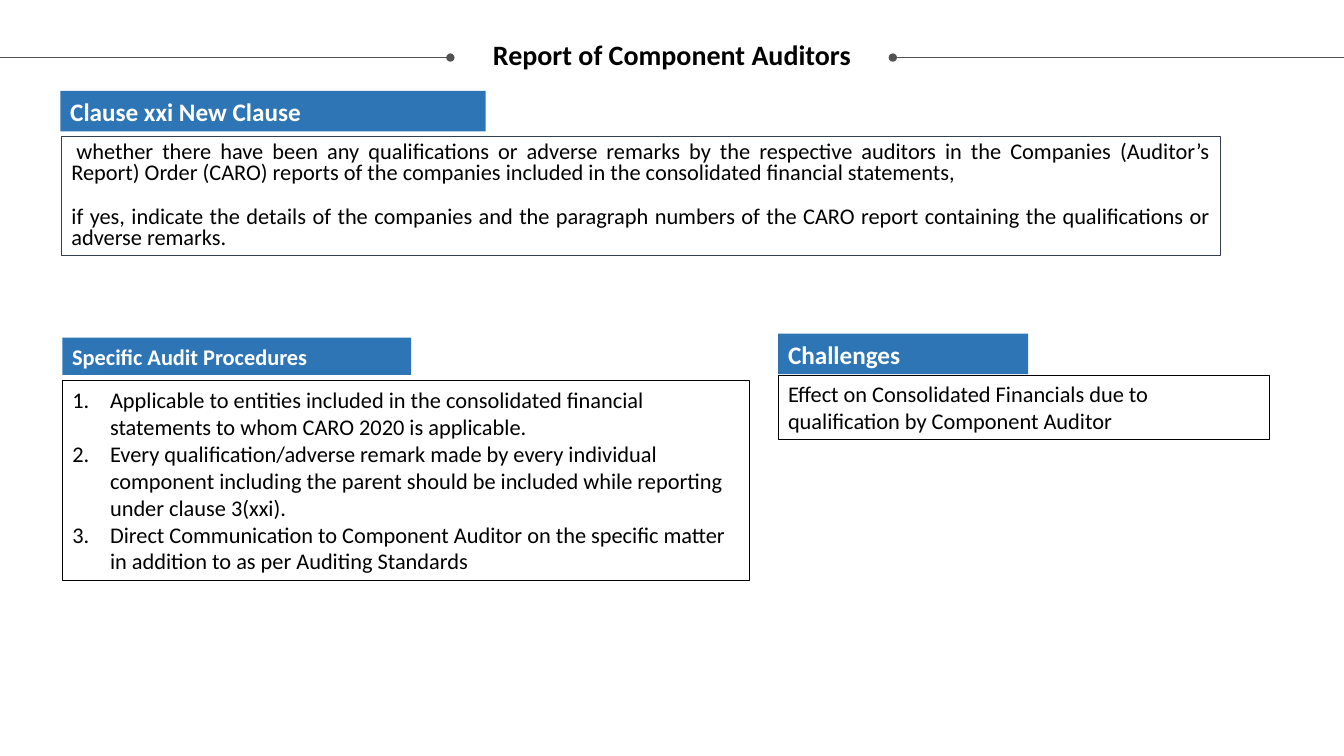
"""Build the slide on the report of component auditors under Clause xxi."""
from lxml import etree
from pptx import Presentation
from pptx.dml.color import RGBColor
from pptx.enum.shapes import MSO_CONNECTOR, MSO_SHAPE
from pptx.enum.text import MSO_ANCHOR, MSO_AUTO_SIZE, PP_ALIGN
from pptx.oxml.ns import qn
from pptx.util import Cm, Pt

RECTANGLE = MSO_SHAPE.RECTANGLE
STRAIGHT = MSO_CONNECTOR.STRAIGHT
MIDDLE = MSO_ANCHOR.MIDDLE
NO_AUTOFIT = MSO_AUTO_SIZE.NONE
LEFT, CENTER, JUSTIFY = PP_ALIGN.LEFT, PP_ALIGN.CENTER, PP_ALIGN.JUSTIFY
BLACK, WHITE, BLUE, GREY, NAVY = "000000", "FFFFFF", "2E75B6", "525252", "333F50"


def rgb(value):
    return RGBColor.from_string(value)


def fill_in(shape, box, paragraphs, size, color=BLACK, bold=False, align=LEFT, spacing=1.0):
    shape.left, shape.top, shape.width, shape.height = [Cm(length) for length in box]
    frame = shape.text_frame
    frame.text = "\n".join(paragraphs)
    frame.word_wrap = True
    frame.auto_size = NO_AUTOFIT
    frame.vertical_anchor = MIDDLE
    for paragraph in frame.paragraphs:
        paragraph.alignment = align
        paragraph.line_spacing = spacing
        paragraph.space_before = Pt(0)
        for run in paragraph.runs:
            run.font.name = "Calibri"
            run.font.size = Pt(size)
            run.font.bold = bold
            run.font.color.rgb = rgb(color)


prs = Presentation()
prs.slide_width, prs.slide_height = Cm(33.87), Cm(19.05)
slide = prs.slides.add_slide(prs.slide_layouts[1])
title, procedures = slide.placeholders

for start, end, dot in [(22.5, 33.87, "a:headEnd"), (0, 11.35, "a:tailEnd")]:
    rule = slide.shapes.add_connector(STRAIGHT, Cm(start), Cm(1.45), Cm(end), Cm(1.45))
    rule.line.color.rgb = rgb(GREY)
    rule.line.width = Pt(0.5)
    etree.SubElement(rule.line._get_or_add_ln(), qn(dot), type="oval")
    etree.SubElement(rule._element.spPr, qn("a:effectLst"))

fill_in(title, (0.64, 1.04, 32.59, 0.76), ["Report of Component Auditors"], 20,
        bold=True, align=CENTER, spacing=0.9)
title_frame = title.text_frame
title_frame.margin_left = title_frame.margin_right = 0
title_frame.margin_top = title_frame.margin_bottom = 0

headings = [
    ("Clause xxi New Clause", (1.52, 2.29, 10.72, 1.02), 18),
    ("Challenges", (19.61, 8.41, 6.3, 1.02), 18),
    ("Specific Audit Procedures", (1.57, 8.51, 8.79, 0.94), 16),
]
for label, box, size in headings:
    heading = slide.shapes.add_shape(RECTANGLE, 0, 0, 0, 0)
    fill_in(heading, box, [label], size, WHITE, bold=True)
    heading.fill.solid()
    heading.fill.fore_color.rgb = rgb(BLUE)
    heading.line.fill.background()
    heading.shadow.inherit = False

clause = slide.shapes.add_shape(RECTANGLE, 0, 0, 0, 0)
fill_in(clause, (1.55, 3.43, 29.21, 3.02), [
    "\u00a0whether there have been any qualifications or adverse remarks by the respective "
    "auditors in the Companies (Auditor’s Report) Order (CARO) reports of the companies "
    "included in the consolidated financial statements,",
    "if yes, indicate the details of the companies and the paragraph numbers of the CARO "
    "report containing the qualifications or adverse remarks.",
], 16, align=JUSTIFY, spacing=0.8)
clause.text_frame.paragraphs[1].space_before = Pt(15.6)

challenge = slide.shapes.add_shape(RECTANGLE, 0, 0, 0, 0)
fill_in(challenge, (19.61, 9.45, 12.37, 1.63), [
    "Effect on Consolidated Financials due to qualification by Component Auditor",
], 16)

fill_in(procedures, (1.57, 9.58, 17.3, 5.05), [
    "Applicable to entities included in the consolidated financial statements to whom "
    "CARO 2020 is applicable.",
    "Every qualification/adverse remark made by every individual component including the "
    "parent should be included while reporting under clause 3(xxi).",
    "Direct Communication to Component Auditor on the specific matter in addition to as per "
    "Auditing Standards",
], 16)
for step in procedures.text_frame.paragraphs:
    properties = step._p.get_or_add_pPr()
    properties.set("marL", str(Cm(0.95)))
    properties.set("indent", str(-Cm(0.95)))
    etree.SubElement(properties, qn("a:buFont"), typeface="+mj-lt")
    etree.SubElement(properties, qn("a:buAutoNum"), type="arabicPeriod")

for panel, color, width in [(clause, NAVY, 0.75), (challenge, BLACK, 0.25), (procedures, BLACK, 0.25)]:
    panel.fill.background()
    panel.line.color.rgb = rgb(color)
    panel.line.width = Pt(width)
    panel.shadow.inherit = False

prs.save("out.pptx")
